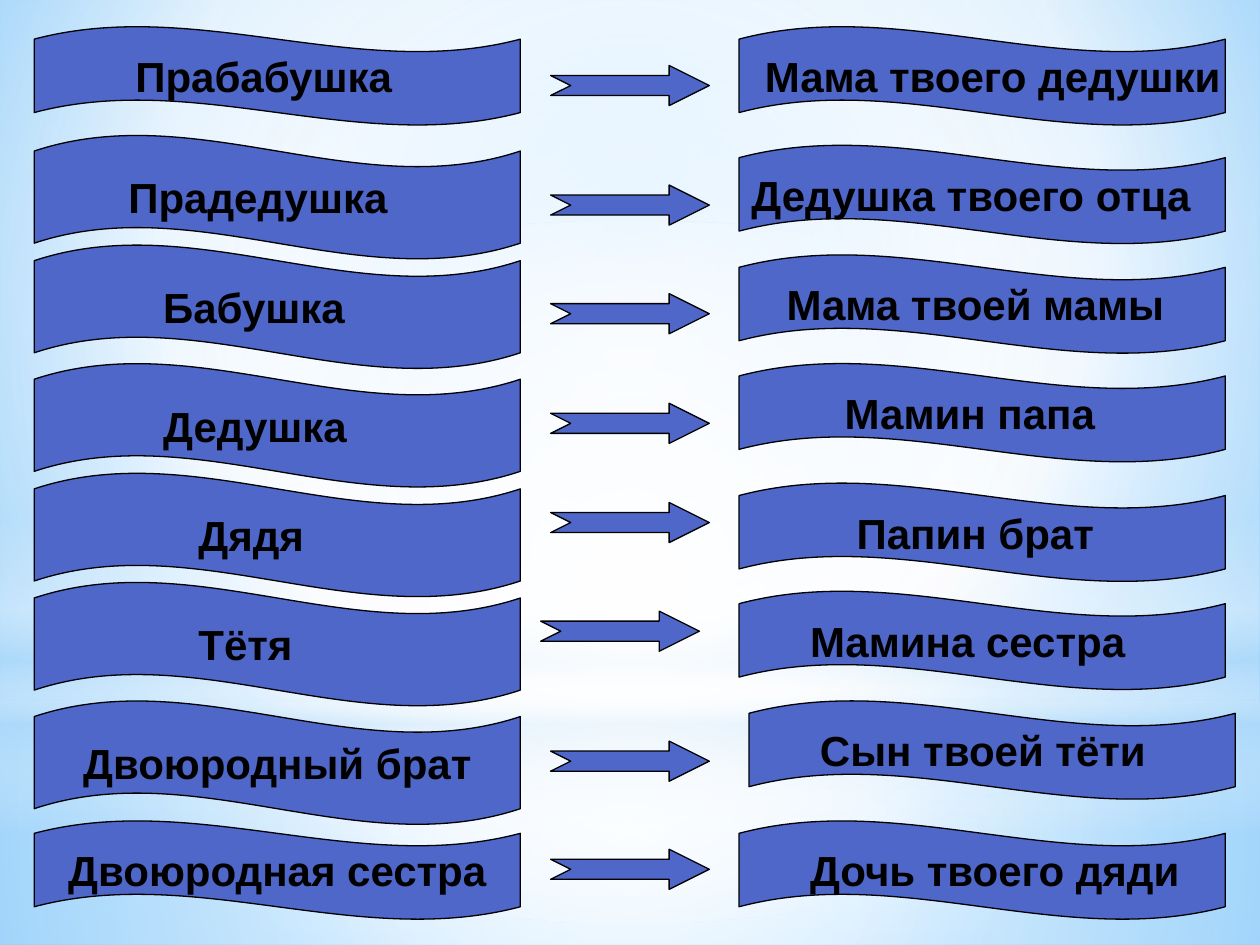
from lxml.etree import SubElement
from pptx import Presentation
from pptx.dml.color import RGBColor
from pptx.enum.shapes import MSO_SHAPE as Shape
from pptx.enum.text import MSO_ANCHOR as Anchor, PP_ALIGN as Align
from pptx.oxml import parse_xml
from pptx.oxml.ns import nsdecls, qn
from pptx.util import Cm, Pt


def paint(fill, colour):
    fill.solid()
    fill.fore_color.rgb = RGBColor.from_string(colour)


def write(shape, text, size=24, font="Arial", colour="000000", indent=None):
    frame = shape.text_frame
    frame.word_wrap = True
    frame.vertical_anchor = Anchor.MIDDLE
    frame.margin_left = Cm(indent or 0)
    frame.margin_right = Cm(0)
    para = frame.paragraphs[0]
    para.alignment = Align.CENTER if indent is None else Align.LEFT
    span = para.add_run()
    span.text = text
    span.font.size = Pt(size)
    span.font.name = font
    span.font.bold = True
    paint(span.font.fill, colour)


deck = Presentation()
deck.slide_width = Cm(25.4)
deck.slide_height = Cm(19.05)
page = deck.slides.add_slide(deck.slide_layouts[6])

centre = {"l": 50, "t": 50, "r": 50, "b": 50}
backdrop = [
    (None, None,
     [(0, "9ED5FF", 100), (60, "FFFFFF", 100), (100, "5BB9FF", 100)],
     {"l": 20, "t": 10, "r": 20, "b": 60}),
    (Shape.RECTANGLE, (0, 14.17, 25.4, 4.88),
     [(0, "FFFFFF", 91), (37, "FFFFFF", 76), (100, "B4DCFA", 79)], centre),
    (Shape.RECTANGLE, (0, 0, 25.4, 14.17),
     [(0, "FFFFFF", 89), (48, "FFFFFF", 62), (100, "B4DCFA", 79)], centre),
    (Shape.RECTANGLE, (0, 10.46, 25.4, 6.35),
     [(0, "FFFFFF", 0), (29, "FFFFFF", 30), (45, "B4DCFA", 40),
      (55, "FFFFFF", 26), (65, "B4DCFA", 60), (100, "FFFFFF", 0)], None),
    (Shape.OVAL, (0, 4.45, 25.4, 14.17),
     [(0, "FFFFFF", 100), (56, "FFFFFF", 0)], centre),
]
for kind, bounds, stops, focus in backdrop:
    if kind is None:
        target = page
        page.background.fill.background()
    else:
        target = page.shapes.add_shape(kind, *map(Cm, bounds))
        target.shadow.inherit = False
        target.fill.background()
    gradient = parse_xml(f'<a:gradFill {nsdecls("a")} rotWithShape="1"/>')
    stop_list = SubElement(gradient, qn("a:gsLst"))
    for position, colour, opacity in stops:
        stop = SubElement(stop_list, qn("a:gs"), pos=str(position * 1000))
        tint = SubElement(stop, qn("a:srgbClr"), val=colour)
        if opacity < 100:
            SubElement(tint, qn("a:alpha"), val=str(opacity * 1000))
    if focus:
        circle = SubElement(gradient, qn("a:path"), {"path": "circle"})
        SubElement(circle, qn("a:fillToRect"),
                   {side: str(share * 1000) for side, share in focus.items()})
    else:
        SubElement(gradient, qn("a:lin"), ang="5400000", scaled="0")
    empty = page.element if kind is None else target.element
    empty = empty.find(".//" + qn("a:noFill"))
    empty.getparent().replace(empty, gradient)
    if kind is not None:
        target.line.fill.background()

relatives = [
    ("Прабабушка", 0.53, 2, 2.04),
    ("Прадедушка", 2.72, 2.51, 1.9),
    ("Бабушка", 4.93, 2.51, 2.6),
    ("Дедушка", 7.32, 2.51, 2.6),
    ("Дядя", 9.53, 2.51, 3.31),
    ("Тётя", 11.73, 2.51, 3.31),
    ("Двоюродный брат", 14.12, 2.51, None),
    ("Двоюродная сестра", 16.54, 2, None),
]
meanings = [
    ("Мама твоего дедушки", 14.9, 0.53, 0.52),
    ("Дедушка твоего отца", 14.9, 2.92, 0.25),
    ("Мама твоей мамы", 14.9, 5.13, 0.96),
    ("Мамин папа", 14.9, 7.32, 2.13),
    ("Папин брат", 14.9, 9.73, 2.37),
    ("Мамина сестра", 14.9, 11.91, 1.43),
    ("Сын твоей тёти", 15.1, 14.12, 1.43),
    ("Дочь твоего дяди", 14.9, 16.54, 1.43),
]
arrows = [(11.1, 1.32), (11.1, 3.73), (11.1, 5.92), (11.1, 8.13),
          (11.1, 10.13), (10.9, 12.32), (11.1, 14.94), (11.1, 17.12)]

items = [(Shape.WAVE, (0.69, top, 9.8, height), (0.13, 0), text, indent)
         for text, top, height, indent in relatives]
items += [(Shape.WAVE, (left, top, 9.8, 2), (0.13, 0), text, indent)
          for text, left, top, indent in meanings]
items += [(Shape.NOTCHED_RIGHT_ARROW, (left, top, 3.2, 0.81), (0.5, 1), None, None)
          for left, top in arrows]
for kind, bounds, bends, text, indent in items:
    box = page.shapes.add_shape(kind, *map(Cm, bounds))
    box.shadow.inherit = False
    for index, bend in enumerate(bends):
        box.adjustments[index] = bend
    paint(box.fill, "4E67C8")
    paint(box.line.fill, "000000")
    box.line.width = Pt(0.75)
    if text:
        write(box, text, indent=indent)

deck.save("out.pptx")
